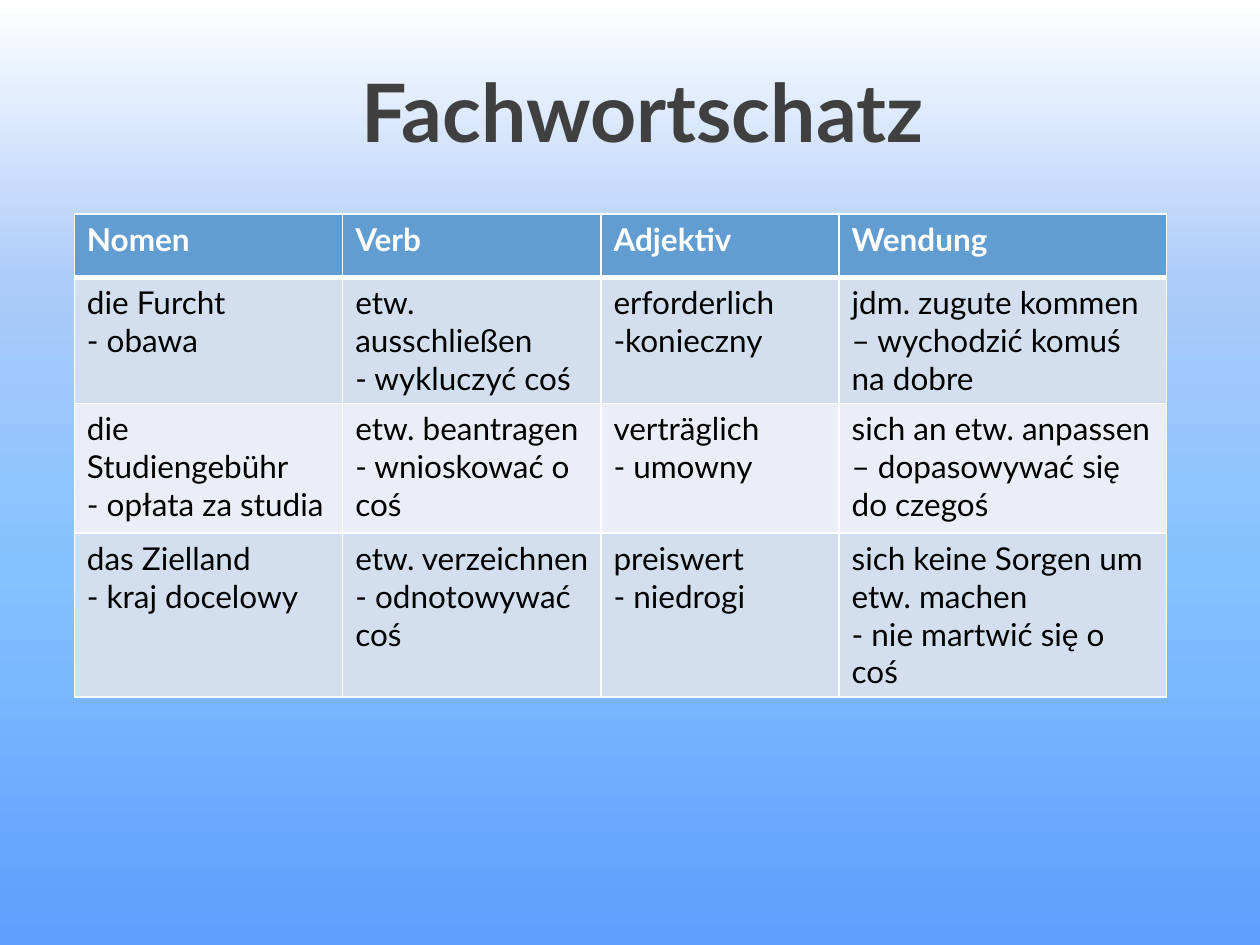
import pptx
import pptx.dml.color
import pptx.enum.text
import pptx.oxml
import pptx.oxml.ns
import pptx.util
from pptx.dml.color import RGBColor
from pptx.util import Inches

WHITE = RGBColor(0xFF, 0xFF, 0xFF)
BLACK = RGBColor(0x00, 0x00, 0x00)
TITLE_GREY = RGBColor(0x40, 0x40, 0x40)
HEADER_BLUE = RGBColor(0x62, 0x9D, 0xD1)
BAND_DARK = RGBColor(0xD3, 0xDF, 0xEE)
BAND_LIGHT = RGBColor(0xEA, 0xEF, 0xF7)
BACKGROUND_STOPS = [
    (0, RGBColor(0x5E, 0x9E, 0xFF)),
    (40, RGBColor(0x85, 0xC2, 0xFF)),
    (70, RGBColor(0xAC, 0xCB, 0xF9)),
    (100, WHITE),
]

COLUMN_WIDTHS = [2.13, 2.05, 1.89, 2.6]
ROW_HEIGHTS = [0.5, 1, 1.03, 1.3]
VOCABULARY = [
    ["Nomen", "Verb", "Adjektiv", "Wendung"],
    [
        "die Furcht\n- obawa",
        "etw. ausschließen\n- wykluczyć coś",
        "erforderlich\n-konieczny",
        "jdm. zugute kommen – wychodzić komuś na dobre",
    ],
    [
        "die Studiengebühr\n- opłata za studia",
        "etw. beantragen\n- wnioskować o coś",
        "verträglich\n- umowny",
        "sich an etw. anpassen\n– dopasowywać się do czegoś",
    ],
    [
        "das Zielland\n- kraj docelowy",
        "etw. verzeichnen\n- odnotowywać coś",
        "preiswert\n- niedrogi",
        "sich keine Sorgen um etw. machen\n- nie martwić się o coś",
    ],
]


class SlideBuilder:
    font_name = "Lato"

    def __init__(self, presentation):
        self.slide = presentation.slides.add_slide(presentation.slide_layouts[5])

    def format_text(self, text_frame, size, color, bold):
        for paragraph in text_frame.paragraphs:
            paragraph.font.name = self.font_name
            paragraph.font.size = pptx.util.Pt(size)
            paragraph.font.bold = bold
            paragraph.font.color.rgb = color

    def background(self, stops):
        fill = self.slide.background.fill
        fill.gradient()
        fill.gradient_angle = 90
        stop_list = self.slide.element.find(".//" + pptx.oxml.ns.qn("a:gsLst"))
        for old_stop in list(stop_list):
            stop_list.remove(old_stop)
        for position, color in stops:
            stop_list.append(pptx.oxml.parse_xml(
                f'<a:gs {pptx.oxml.ns.nsdecls("a")} pos="{position * 1000}">'
                f'<a:srgbClr val="{color}"/></a:gs>'
            ))

    def title(self, text, left, top, width, height):
        shape = self.slide.shapes.title
        shape.left, shape.top = Inches(left), Inches(top)
        shape.width, shape.height = Inches(width), Inches(height)
        text_frame = shape.text_frame
        text_frame.text = text
        text_frame.vertical_anchor = pptx.enum.text.MSO_ANCHOR.TOP
        text_frame.paragraphs[0].alignment = pptx.enum.text.PP_ALIGN.CENTER
        self.format_text(text_frame, 46, TITLE_GREY, True)

    def borders(self, cell, top, bottom):
        properties = cell._tc.get_or_add_tcPr()
        widths = {"lnL": 1, "lnR": 1, "lnT": top, "lnB": bottom}
        for index, (side, width) in enumerate(widths.items()):
            properties.insert(index, pptx.oxml.parse_xml(
                f'<a:{side} {pptx.oxml.ns.nsdecls("a")} w="{pptx.util.Pt(width)}">'
                f'<a:solidFill><a:srgbClr val="{WHITE}"/></a:solidFill></a:{side}>'
            ))

    def table(self, rows, left, top, column_widths, row_heights):
        table = self.slide.shapes.add_table(
            len(rows), len(column_widths), Inches(left), Inches(top),
            Inches(sum(column_widths)), Inches(sum(row_heights)),
        ).table
        for column, width in zip(table.columns, column_widths):
            column.width = Inches(width)
        for row, height in zip(table.rows, row_heights):
            row.height = Inches(height)
        for row_index, texts in enumerate(rows):
            header = row_index == 0
            band = BAND_DARK if row_index % 2 else BAND_LIGHT
            for column_index, text in enumerate(texts):
                cell = table.cell(row_index, column_index)
                cell.text = text
                cell.fill.solid()
                cell.fill.fore_color.rgb = HEADER_BLUE if header else band
                self.format_text(cell.text_frame, 18, WHITE if header else BLACK, header)
                self.borders(cell, 3 if row_index == 1 else 1, 3 if header else 1)


def main():
    presentation = pptx.Presentation()
    presentation.slide_width = Inches(10)
    presentation.slide_height = Inches(7.5)
    builder = SlideBuilder(presentation)
    builder.background(BACKGROUND_STOPS)
    builder.title("Fachwortschatz", 1.46, 0.44, 7.28, 1.25)
    builder.table(VOCABULARY, 0.59, 1.7, COLUMN_WIDTHS, ROW_HEIGHTS)
    presentation.save("out.pptx")


if __name__ == "__main__":
    main()
